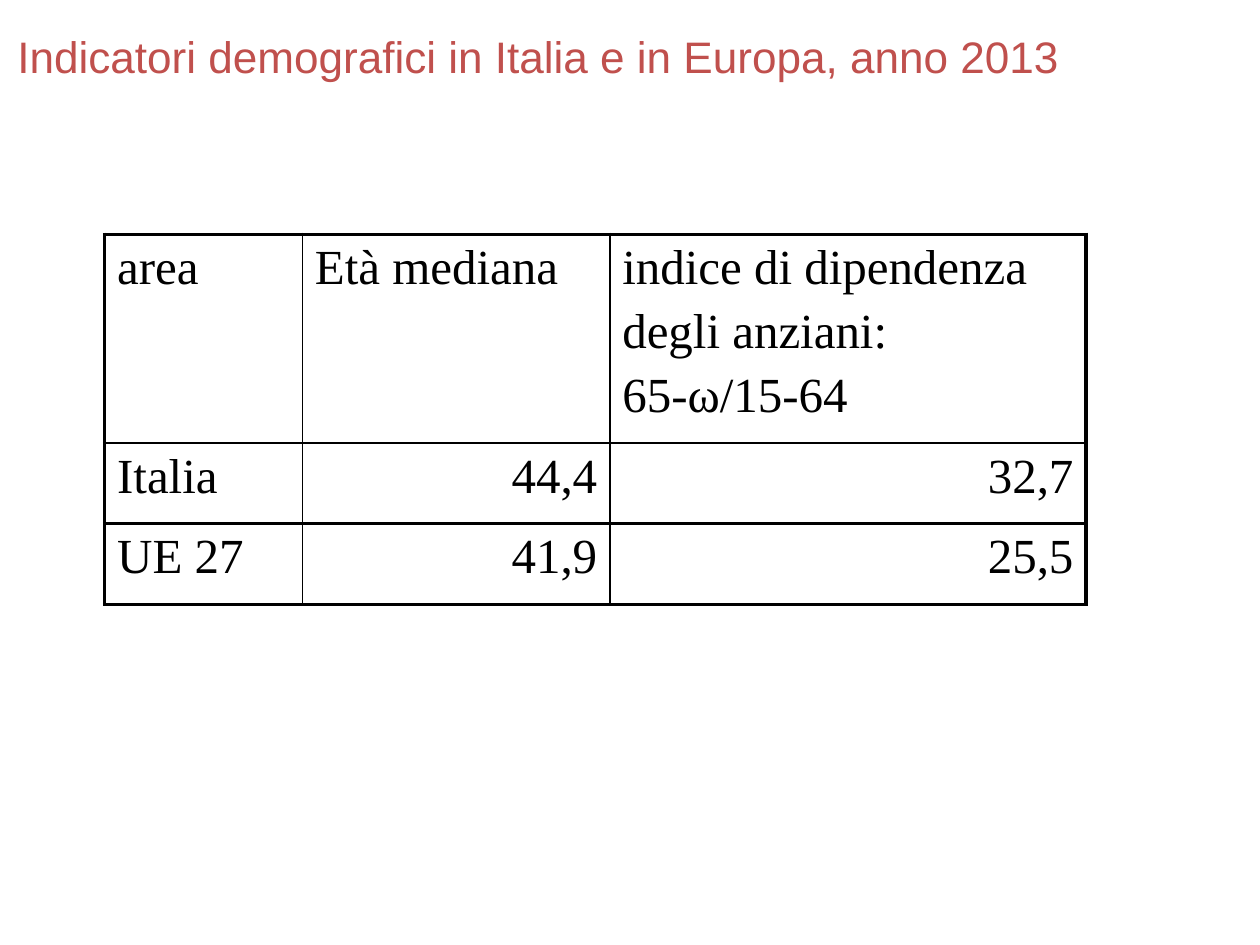
from dataclasses import dataclass

from lxml import etree
from pptx import Presentation
from pptx.dml.color import RGBColor
from pptx.enum.text import MSO_ANCHOR, PP_ALIGN
from pptx.oxml.ns import qn
from pptx.util import Inches, Pt

LEFT, RIGHT = PP_ALIGN.LEFT, PP_ALIGN.RIGHT
MIDDLE = MSO_ANCHOR.MIDDLE
COLORS = {"title": "C0504D", "ink": "000000"}
SLIDE_W, SLIDE_H = 10, 7.5
THIN, THICK = 1, 2.25

# Table grid: column widths, row heights, and line weights between them
COLUMNS = [1.57, 2.44, 3.78]
ROWS = [1.55, 0.64, 0.64]
COLUMN_LINES = [THICK, THIN, THIN, THICK]
ROW_LINES = [THICK, THIN, THICK, THICK]
CONTENT = [
    ["area", "Età mediana", "indice di dipendenza\ndegli anziani:\n65-ω/15-64"],
    ["Italia", "44,4", "32,7"],
    ["UE 27", "41,9", "25,5"],
]


@dataclass
class TextStyle:
    font: str
    size: float
    color: str


TITLE = TextStyle("Arial", 25.2, "title")
BODY = TextStyle("Times New Roman", 28, "ink")


def add_span(para, text: str, style: TextStyle) -> None:
    span = para.add_run()
    span.text = text
    span.font.name = style.font
    span.font.size = Pt(style.size)
    span.font.color.rgb = RGBColor.from_string(COLORS[style.color])


def space_before(para, percent: int) -> None:
    """Set paragraph spacing as a share of the line height."""
    para.space_before = Pt(0)
    spacing = para._p.pPr.find(qn("a:spcBef"))
    spacing.remove(spacing[0])
    etree.SubElement(spacing, qn("a:spcPct"), val=str(percent * 1000))


def add_border(cell, side: str, weight: float) -> None:
    line = etree.SubElement(cell._tc.get_or_add_tcPr(), qn(f"a:ln{side}"),
                            w=str(Pt(weight)))
    fill = etree.SubElement(line, qn("a:solidFill"))
    etree.SubElement(fill, qn("a:srgbClr"), val=COLORS["ink"])


def fill_cell(cell, text: str, row: int, column: int) -> None:
    weights = {"L": COLUMN_LINES[column], "R": COLUMN_LINES[column + 1],
               "T": ROW_LINES[row], "B": ROW_LINES[row + 1]}
    for side, weight in weights.items():
        add_border(cell, side, weight)
    cell.fill.background()
    frame = cell.text_frame
    for index, line in enumerate(text.split("\n")):
        para = frame.add_paragraph() if index else frame.paragraphs[0]
        para.alignment = RIGHT if row and column else LEFT
        space_before(para, 20)
        add_span(para, line, BODY)


def add_title(page, text: str) -> None:
    box = page.shapes.add_textbox(Inches(0.04), Inches(0.21),
                                  Inches(SLIDE_W - 0.04), Inches(0.47))
    frame = box.text_frame
    frame.word_wrap = True
    frame.vertical_anchor = MIDDLE
    add_span(frame.paragraphs[0], text, TITLE)


def add_indicator_table(page) -> None:
    table = page.shapes.add_table(
        len(ROWS), len(COLUMNS), Inches(0.83), Inches(1.86),
        Inches(sum(COLUMNS)), Inches(sum(ROWS))).table
    table.first_row = table.horz_banding = False
    for column, width in zip(table.columns, COLUMNS):
        column.width = Inches(width)
    for row, height in zip(table.rows, ROWS):
        row.height = Inches(height)
    for row, texts in enumerate(CONTENT):
        for column, text in enumerate(texts):
            fill_cell(table.cell(row, column), text, row, column)


def main() -> None:
    deck = Presentation()
    deck.slide_width, deck.slide_height = Inches(SLIDE_W), Inches(SLIDE_H)
    page = deck.slides.add_slide(deck.slide_layouts[6])
    add_title(page, "Indicatori demografici in Italia e in Europa, anno 2013")
    add_indicator_table(page)
    deck.save("out.pptx")


if __name__ == "__main__":
    main()
